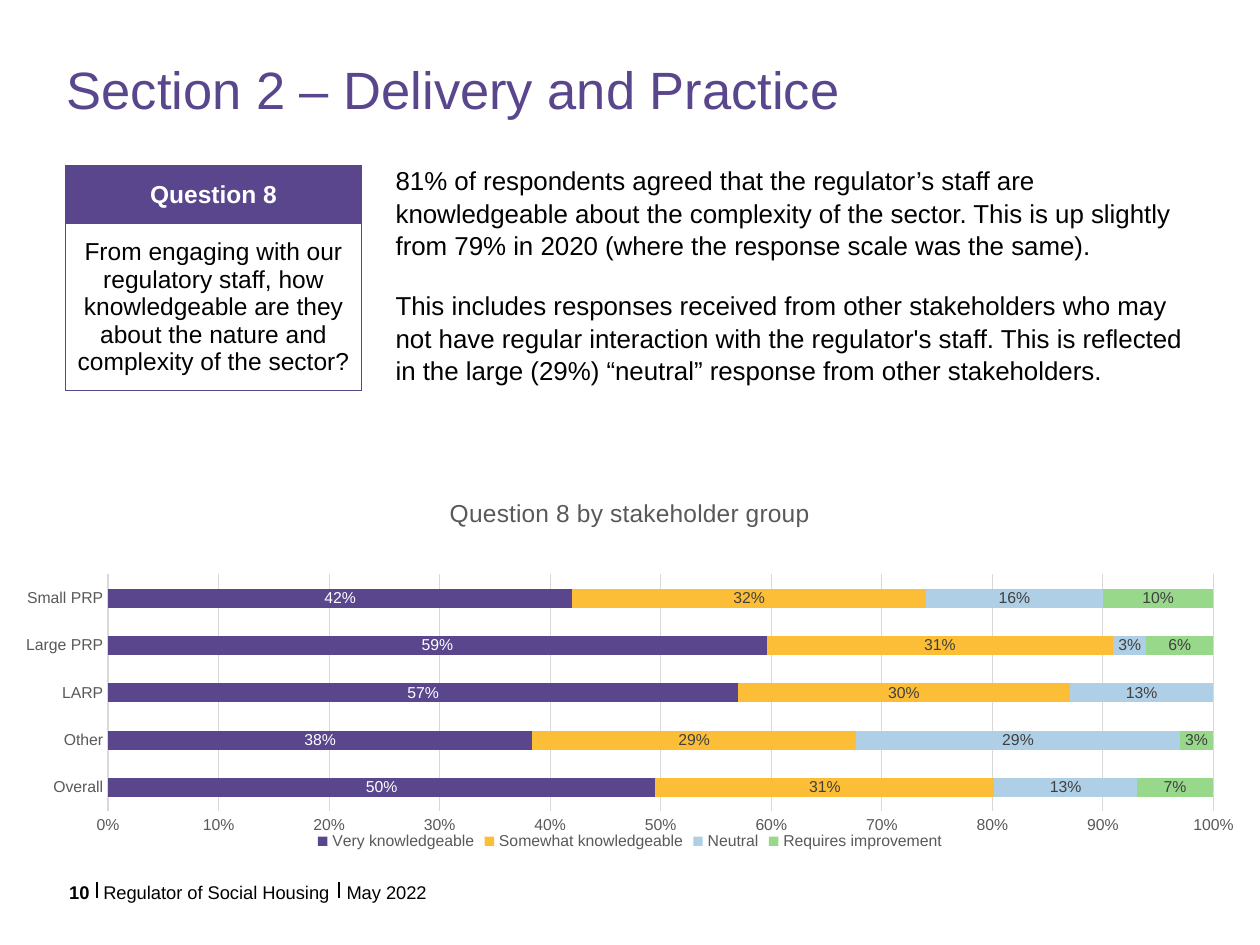
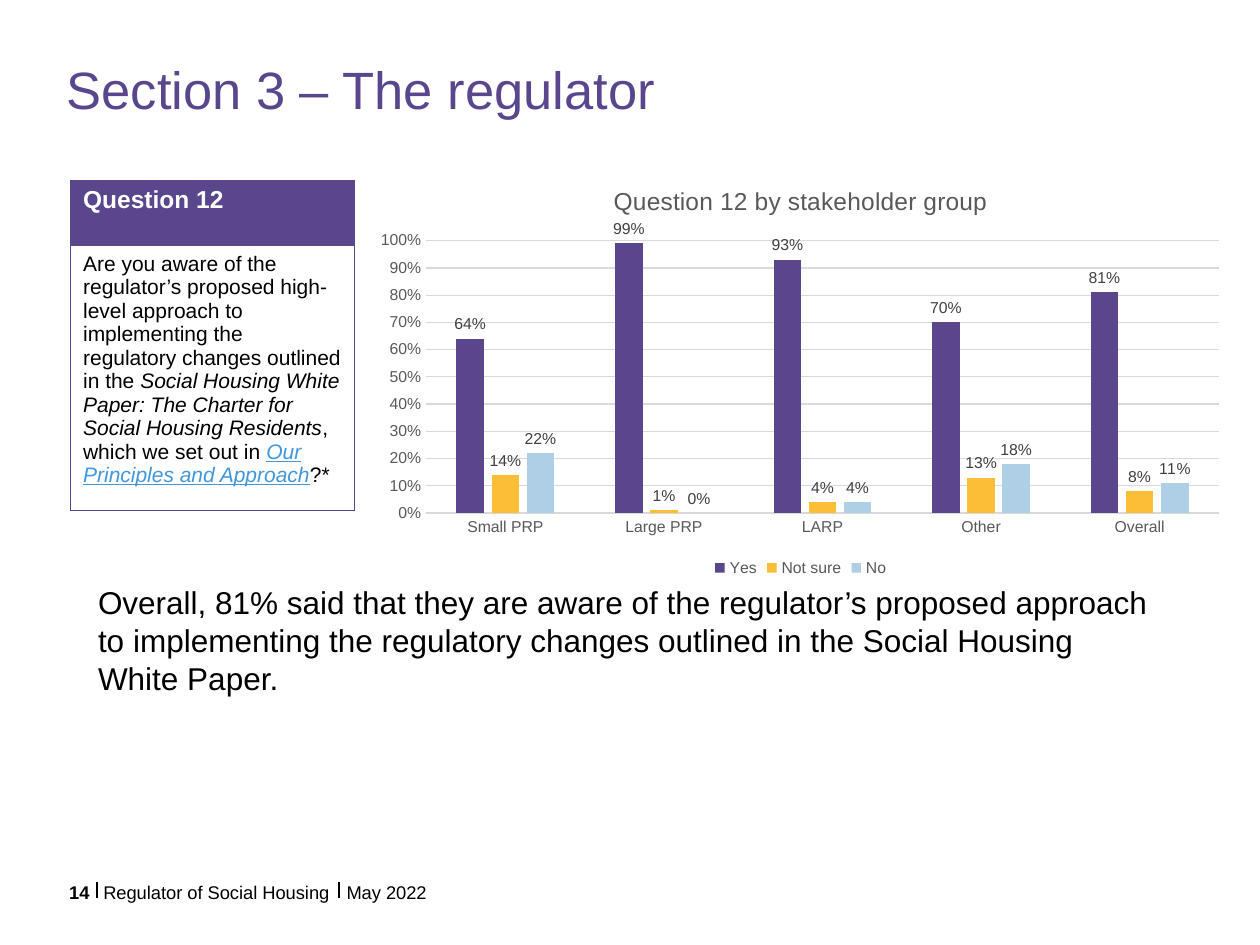
from lxml.etree import SubElement
from pptx import Presentation
from pptx.chart.data import CategoryChartData
from pptx.dml.color import RGBColor
from pptx.enum.chart import (XL_AXIS_CROSSES, XL_CHART_TYPE, XL_LABEL_POSITION,
                             XL_LEGEND_POSITION, XL_TICK_MARK)
from pptx.enum.shapes import MSO_CONNECTOR
from pptx.enum.text import MSO_ANCHOR, PP_ALIGN
from pptx.oxml import parse_xml
from pptx.oxml.ns import nsdecls, qn
from pptx.util import Inches, Pt

# Shared look
COLORS = {"purple": "59468D", "amber": "FCBE37", "blue": "AECFE6", "green": "97D88A",
          "link": "4097DB", "black": "000000", "white": "FFFFFF",
          "grey": "595959", "dark": "404040", "grid": "D9D9D9"}
FONT = "Arial"
TITLE_BOX = (0.53, 0.51, 8.87, 0.79)
FOOTER = [("Regulator of Social Housing", (0.82, 6.99, 1.83, 0.12)),
          ("May 2022", (2.75, 6.99, 2.35, 0.12))]
PAGE_NUMBER_BOX = (0.53, 6.99, 0.2, 0.12)
FOOTER_RULES = [0.77, 2.69]

# Content: a text run is (text, format values)
SLIDES = [
    {
        "title": "Section 2 – Delivery and Practice",
        "page": "10",
        "question": {
            "head": "Question 8",
            "body": [("From engaging with our regulatory staff, how knowledgeable are they "
                      "about the nature and complexity of the sector?", {})],
            "box": (0.52, 1.31, 2.35), "rows": (0.46, 1.33), "size": 14,
            "align": PP_ALIGN.CENTER, "anchor": MSO_ANCHOR.MIDDLE,
            "margins": (0.01, 0.01, 0.01, 0),
        },
        "text": {
            "paragraphs": [
                "81% of respondents agreed that the regulator’s staff are knowledgeable about "
                "the complexity of the sector. This is up slightly from 79% in 2020 (where the "
                "response scale was the same).",
                "This includes responses received from other stakeholders who may not have "
                "regular interaction with the regulator's staff. This is reflected in the large "
                "(29%) “neutral” response from other stakeholders.",
            ],
            "box": (3.14, 1.3, 6.33, 2.42), "size": 14.8, "margins": (0, 0, 0, 0),
            "spacing": {"line_spacing": 1.04, "space_after": Pt(16)},
        },
        "chart": {
            "title": "Question 8 by stakeholder group",
            "type": XL_CHART_TYPE.BAR_STACKED_100,
            "box": (0.01, 3.8, 9.98, 2.99), "plot": (0.86, 4.56, 8.77, 1.88),
            "bars": {"gap_width": 150, "overlap": 100},
            "labels_at": XL_LABEL_POSITION.CENTER,
            "values_cross": XL_AXIS_CROSSES.MAXIMUM,
            "categories": ["Overall", "Other", "LARP", "Large PRP", "Small PRP"],
            "series": [
                ("Very knowledgeable", [0.5, 0.38, 0.57, 0.59, 0.42], "purple", "white"),
                ("Somewhat knowledgeable", [0.31, 0.29, 0.3, 0.31, 0.32], "amber", "dark"),
                ("Neutral", [0.13, 0.29, 0.13, 0.03, 0.16], "blue", "dark"),
                ("Requires improvement", [0.07, 0.03, 0, 0.06, 0.1], "green", "dark"),
            ],
            "unlabelled": [(3, 2)],
        },
    },
    {
        "title": "Section 3 – The regulator",
        "page": "14",
        "question": {
            "head": "Question 12",
            "body": [
                ("Are you aware of the regulator’s proposed high-level approach to implementing "
                 "the regulatory changes outlined in the ", {}),
                ("Social Housing White Paper: The Charter for Social Housing Residents",
                 {"italic": True}),
                (", which we set out in ", {}),
                ("Our Principles and Approach",
                 {"color": "link", "italic": True, "underline": True}),
                ("?*", {}),
            ],
            "box": (0.56, 1.43, 2.25), "rows": (0.52, 1.94), "size": 12,
            "align": PP_ALIGN.LEFT, "anchor": MSO_ANCHOR.TOP,
            "margins": (0.1, 0.05, 0.1, 0.05),
        },
        "text": {
            "paragraphs": [
                "Overall, 81% said that they are aware of the regulator’s proposed approach to "
                "implementing the regulatory changes outlined in the Social Housing White Paper.",
            ],
            "box": (0.68, 4.58, 8.64, 1.01), "size": 18, "margins": (0.1, 0.05, 0.1, 0.05),
            "spacing": {"space_after": Pt(6)},
        },
        "chart": {
            "title": "Question 12 by stakeholder group",
            "type": XL_CHART_TYPE.COLUMN_CLUSTERED,
            "box": (2.89, 1.32, 6.93, 3.3), "plot": (3.38, 1.91, 6.29, 2.16),
            "bars": {"gap_width": 219, "overlap": -27},
            "labels_at": XL_LABEL_POSITION.OUTSIDE_END,
            "values_cross": XL_AXIS_CROSSES.AUTOMATIC,
            "categories": ["Small PRP", "Large PRP", "LARP", "Other", "Overall"],
            "series": [
                ("Yes", [0.64, 0.99, 0.93, 0.7, 0.81], "purple", "dark"),
                ("Not sure", [0.14, 0.01, 0.04, 0.13, 0.08], "amber", "dark"),
                ("No", [0.22, 0, 0.04, 0.18, 0.11], "blue", "dark"),
            ],
            "unlabelled": [],
        },
    },
]


def rgb(name):
    return RGBColor.from_string(COLORS[name])


def inches(values):
    return [Inches(v) for v in values]


def set_all(obj, values):
    for name, value in values.items():
        setattr(obj, name, value)


def set_font(font, size, color="black", **values):
    set_all(font, {"name": FONT, "size": Pt(size), **values})
    font.color.rgb = rgb(color)


def set_margins(obj, margins):
    for side, value in zip(("left", "top", "right", "bottom"), margins):
        setattr(obj, f"margin_{side}", Inches(value))


def set_line(line, color, width=0.75):
    line.color.rgb = rgb(color)
    line.width = Pt(width)


def add_run(p, text, size, color="black", **values):
    r = p.add_run()
    r.text = text
    set_font(r.font, size, color, **values)


def add_text(s, paragraphs, box, size, margins=(0, 0, 0, 0), spacing=None, bold=False,
             align=PP_ALIGN.LEFT):
    tf = s.shapes.add_textbox(*inches(box)).text_frame
    tf.word_wrap = True
    set_margins(tf, margins)
    for i, text in enumerate(paragraphs):
        p = tf.add_paragraph() if i else tf.paragraphs[0]
        set_all(p, {"alignment": align, **(spacing or {})})
        add_run(p, text, size, bold=bold)


def add_title(s, text):
    sp = s.shapes.title
    set_all(sp, dict(zip(("left", "top", "width", "height"), inches(TITLE_BOX))))
    tf = sp.text_frame
    set_all(tf, {"word_wrap": True, "vertical_anchor": MSO_ANCHOR.TOP})
    set_margins(tf, (0, 0, 0, 0))
    p = tf.paragraphs[0]
    set_all(p, {"alignment": PP_ALIGN.LEFT, "line_spacing": 0.9})
    add_run(p, text, 30, "purple")


def add_footer(s, page):
    for x in FOOTER_RULES:
        rule = s.shapes.add_connector(MSO_CONNECTOR.STRAIGHT, *inches((x, 7.13, x, 7)))
        set_line(rule.line, "black")
        SubElement(rule._element.spPr, qn("a:effectLst"))
    for text, box in FOOTER:
        add_text(s, [text], box, 10.5)
    add_text(s, [page], PAGE_NUMBER_BOX, 10.5, bold=True, align=PP_ALIGN.CENTER)


def add_borders(cell):
    tcPr = cell._tc.get_or_add_tcPr()
    for i, side in enumerate(("lnL", "lnR", "lnT", "lnB")):
        tcPr.insert(i, parse_xml(
            f'<a:{side} {nsdecls("a")} w="{Pt(0.5)}"><a:solidFill>'
            f'<a:srgbClr val="{COLORS["purple"]}"/></a:solidFill></a:{side}>'))


def add_question(s, q):
    x, y, width = q["box"]
    table = s.shapes.add_table(2, 1, *inches((x, y, width, sum(q["rows"])))).table
    set_all(table, {"first_row": False, "horz_banding": False})
    head = [(q["head"], {"size": 14, "color": "white", "bold": True})]
    body = [(text, {"size": q["size"], **values}) for text, values in q["body"]]
    for i, (runs, fill) in enumerate([(head, "purple"), (body, "white")]):
        table.rows[i].height = Inches(q["rows"][i])
        cell = table.cell(i, 0)
        cell.fill.solid()
        cell.fill.fore_color.rgb = rgb(fill)
        cell.vertical_anchor = q["anchor"]
        set_margins(cell, q["margins"])
        add_borders(cell)
        p = cell.text_frame.paragraphs[0]
        p.alignment = q["align"]
        for text, values in runs:
            add_run(p, text, **values)


def place_plot(chart, box, plot):
    """Fix the inner plot area, given in slide inches, inside the chart frame."""
    x, y, w, h = box
    px, py, pw, ph = plot
    shares = {"x": (px - x) / w, "y": (py - y) / h, "w": pw / w, "h": ph / h}
    values = "".join(f'<c:{k} val="{v:.3f}"/>' for k, v in shares.items())
    area = chart._chartSpace.chart.plotArea
    for old in area.findall(qn("c:layout")):
        area.remove(old)
    area.insert(0, parse_xml(
        f'<c:layout {nsdecls("c")}><c:manualLayout><c:layoutTarget val="inner"/>'
        f'<c:xMode val="edge"/><c:yMode val="edge"/>{values}</c:manualLayout></c:layout>'))


def add_chart(s, c):
    data = CategoryChartData(number_format="0%")
    data.categories = c["categories"]
    for name, values, _, _ in c["series"]:
        data.add_series(name, values)
    chart = s.shapes.add_chart(c["type"], *inches(c["box"]), data).chart
    set_font(chart.font, 10)

    # Title and legend
    chart.has_title = True
    add_run(chart.chart_title.text_frame.paragraphs[0], c["title"], 14, "grey", bold=False)
    chart.chart_title.include_in_layout = False
    chart.has_legend = True
    set_all(chart.legend, {"position": XL_LEGEND_POSITION.BOTTOM, "include_in_layout": False})
    set_font(chart.legend.font, 9, "grey")

    # Axes
    cats, vals = chart.category_axis, chart.value_axis
    for axis in (cats, vals):
        set_all(axis, {"major_tick_mark": XL_TICK_MARK.NONE,
                       "minor_tick_mark": XL_TICK_MARK.NONE})
        set_font(axis.tick_labels.font, 9, "grey")
    cats.crosses = c["values_cross"]
    set_line(cats.format.line, "grid")
    set_all(vals, {"minimum_scale": 0, "maximum_scale": 1, "major_unit": 0.1,
                   "has_major_gridlines": True})
    vals.format.line.fill.background()
    set_line(vals.major_gridlines.format.line, "grid")
    set_all(vals.tick_labels, {"number_format": "0%", "number_format_is_linked": False})

    # Bars and their labels
    plot = chart.plots[0]
    set_all(plot, {"vary_by_categories": False, **c["bars"]})
    for series, (_, _, color, label_color) in zip(plot.series, c["series"]):
        series.invert_if_negative = False
        series.format.fill.solid()
        series.format.fill.fore_color.rgb = rgb(color)
        labels = series.data_labels
        set_all(labels, {"show_value": True, "number_format": "0%",
                         "number_format_is_linked": False, "position": c["labels_at"]})
        set_font(labels.font, 9, label_color)
    for series, point in c["unlabelled"]:
        plot.series[series].data_labels._element.insert(0, parse_xml(
            f'<c:dLbl {nsdecls("c")}><c:idx val="{point}"/><c:delete val="1"/></c:dLbl>'))
    place_plot(chart, c["box"], c["plot"])


def main():
    prs = Presentation()
    prs.slide_width, prs.slide_height = inches((10, 7.5))
    for content in SLIDES:
        s = prs.slides.add_slide(prs.slide_layouts[5])
        add_title(s, content["title"])
        add_footer(s, content["page"])
        add_chart(s, content["chart"])
        add_question(s, content["question"])
        add_text(s, **content["text"])
    prs.save("out.pptx")


if __name__ == "__main__":
    main()
